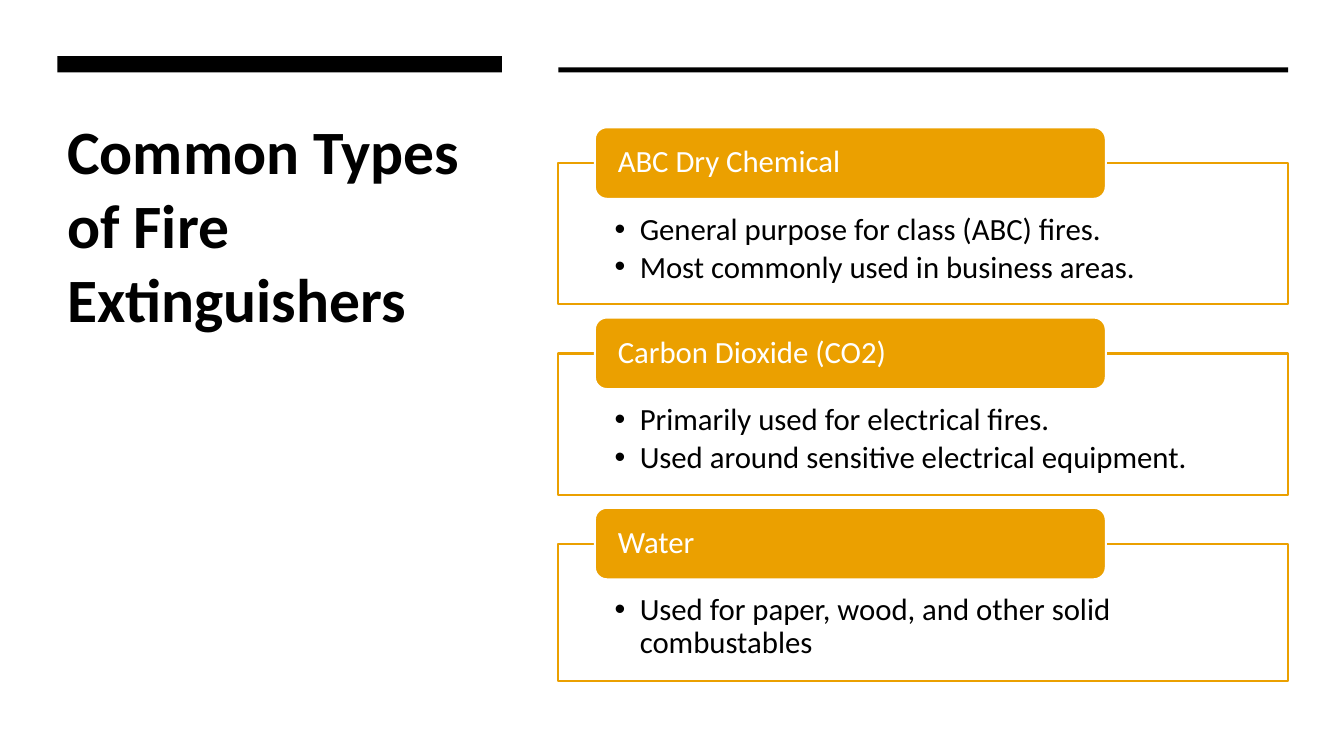
from lxml import etree
from pptx import Presentation
from pptx.dml.color import RGBColor
from pptx.enum.shapes import MSO_SHAPE
from pptx.enum.text import MSO_ANCHOR, PP_ALIGN
from pptx.oxml.ns import qn
from pptx.util import Pt

RECTANGLE = MSO_SHAPE.RECTANGLE
ROUNDED = MSO_SHAPE.ROUNDED_RECTANGLE
TOP, MIDDLE = MSO_ANCHOR.TOP, MSO_ANCHOR.MIDDLE
LEFT = PP_ALIGN.LEFT

TITLE = "Common Types of Fire Extinguishers"
EXTINGUISHERS = [
    ("ABC Dry Chemical", ["General purpose for class (ABC) fires.",
                          "Most commonly used in business areas."], 100.8),
    ("Carbon Dioxide (CO2)", ["Primarily used for electrical fires.",
                              "Used around sensitive electrical equipment."], 100.8),
    ("Water", ["Used for paper, wood, and other solid combustables"], 97.9),
]
COLORS = {"black": "000000", "white": "FFFFFF", "amber": "EBA000"}
FONT = "Calibri"
TITLE_SIZE, BODY_SIZE = 44, 22
TITLE_BOX = (41, 77, 317.5, 265)
BARS = [(41, 40.2, 317.5, 11.5), (398.9, 48.2, 521.3, 3.6)]
PANEL_LEFT, PANEL_TOP, PANEL_WIDTH, PITCH = 398.9, 116.6, 521.3, 135.9
TAB_INDENT, TAB_RISE, TAB_WIDTH, TAB_HEIGHT = 26, 25.7, 365, 51.1
PANEL_INSETS = (40.1, 36, 40.1, 12.2)
TAB_INSETS = (13.9, 0, 13.9, 0)
BULLET_INDENT = 18


def color(name):
    return RGBColor.from_string(COLORS[name])


def add_box(page, kind, bounds, fill, line=None):
    box = page.shapes.add_shape(kind, *map(Pt, bounds))
    box.shadow.inherit = False
    box.fill.solid()
    box.fill.fore_color.rgb = color(fill)
    if line:
        box.line.color.rgb = color(line)
        box.line.width = Pt(1.5)
    else:
        box.line.fill.background()
    return box


def add_bullet(para):
    properties = para._p.get_or_add_pPr()
    properties.set("marL", str(Pt(BULLET_INDENT)))
    properties.set("indent", str(-Pt(BULLET_INDENT)))
    etree.SubElement(properties, qn("a:buFont")).set("typeface", "Arial")
    etree.SubElement(properties, qn("a:buChar")).set("char", "•")


def write(box, lines, size, ink, insets, anchor=TOP, spacing=0.9, after=0,
          bold=False, bulleted=False):
    frame = box.text_frame
    frame.word_wrap = True
    frame.vertical_anchor = anchor
    (frame.margin_left, frame.margin_top,
     frame.margin_right, frame.margin_bottom) = map(Pt, insets)
    for number, line in enumerate(lines):
        para = frame.add_paragraph() if number else frame.paragraphs[0]
        para.alignment = LEFT
        para.line_spacing = spacing
        para.space_after = Pt(after)
        if bulleted:
            add_bullet(para)
        span = para.add_run()
        span.text = line
        span.font.name = FONT
        span.font.size = Pt(size)
        span.font.bold = bold
        span.font.color.rgb = color(ink)


def main():
    deck = Presentation()
    deck.slide_width, deck.slide_height = Pt(960), Pt(540)
    page = deck.slides.add_slide(deck.slide_layouts[6])

    title = page.shapes.add_textbox(*map(Pt, TITLE_BOX))
    write(title, [TITLE], TITLE_SIZE, "black", (7.2, 3.6, 7.2, 3.6),
          spacing=1.0, bold=True)
    for bounds in BARS:
        add_box(page, RECTANGLE, bounds, "black")

    for row, (name, uses, height) in enumerate(EXTINGUISHERS):
        top = PANEL_TOP + row * PITCH
        panel = add_box(page, RECTANGLE, (PANEL_LEFT, top, PANEL_WIDTH, height),
                        "white", "amber")
        write(panel, uses, BODY_SIZE, "black", PANEL_INSETS, after=3.3, bulleted=True)
        tab = add_box(page, ROUNDED, (PANEL_LEFT + TAB_INDENT, top - TAB_RISE,
                                      TAB_WIDTH, TAB_HEIGHT), "amber", "white")
        write(tab, [name], BODY_SIZE, "white", TAB_INSETS, anchor=MIDDLE)

    deck.save("out.pptx")


if __name__ == "__main__":
    main()
